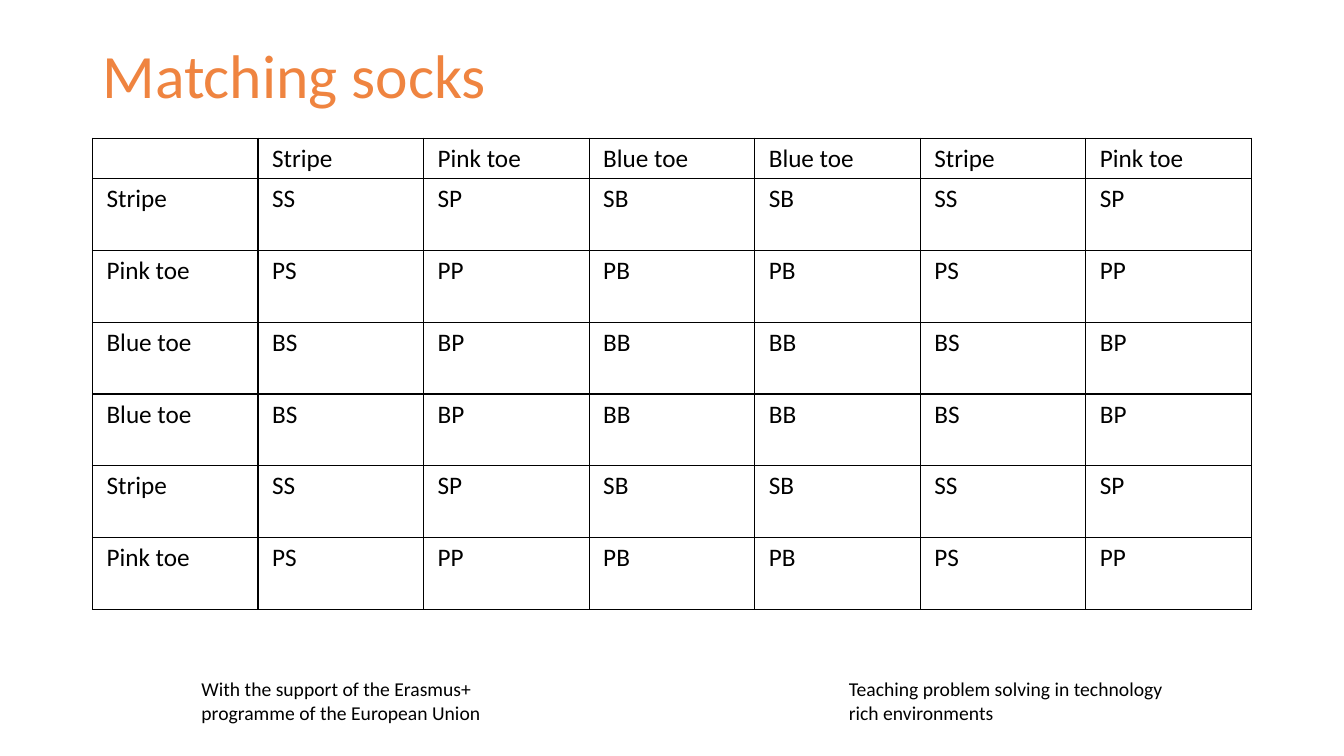
from lxml.etree import SubElement
from pptx import Presentation
from pptx.dml.color import RGBColor
from pptx.enum.shapes import MSO_SHAPE
from pptx.enum.text import MSO_ANCHOR, MSO_AUTO_SIZE, PP_ALIGN
from pptx.oxml.ns import qn
from pptx.util import Inches, Pt

COLOURS = {"title": "EF8440", "ink": "000000", "paper": "FFFFFF"}
FONT = "Calibri"
WIDTH, HEIGHT = Inches(13.33), Inches(7.5)
SOCKS = ["Stripe", "Pink toe", "Blue toe", "Blue toe", "Stripe", "Pink toe"]


def across(percent):
    return round(WIDTH * percent / 100)


def down(percent):
    return round(HEIGHT * percent / 100)


def area(left, top, width, height):
    return across(left), down(top), across(width), down(height)


def write(frame, text, size, colour):
    frame.word_wrap = True
    paragraph = frame.paragraphs[0]
    paragraph.text = text
    paragraph.alignment = PP_ALIGN.LEFT
    paragraph.font.name = FONT
    paragraph.font.size = Pt(size)
    paragraph.font.color.rgb = RGBColor.from_string(COLOURS[colour])
    return paragraph


def add_text(page, place, text, size, colour):
    box = page.shapes.add_textbox(*area(*place))
    return box, write(box.text_frame, text, size, colour)


def add_panel(page, place, text, size):
    panel = page.shapes.add_shape(MSO_SHAPE.RECTANGLE, *area(*place))
    panel.shadow.inherit = False
    panel.fill.solid()
    panel.fill.fore_color.rgb = RGBColor.from_string(COLOURS["paper"])
    panel.line.fill.background()
    panel.text_frame.vertical_anchor = MSO_ANCHOR.TOP
    write(panel.text_frame, text, size, "ink").space_after = Pt(8)


def add_borders(cell):
    properties = cell._tc.get_or_add_tcPr()
    for side in ("lnL", "lnR", "lnT", "lnB"):
        line = SubElement(properties, qn(f"a:{side}"), w=str(Pt(1)))
        fill = SubElement(line, qn("a:solidFill"))
        SubElement(fill, qn("a:srgbClr"), val=COLOURS["ink"])


def fill_cell(cell, text):
    cell.margin_left = cell.margin_right = Inches(0.14)
    cell.margin_top = cell.margin_bottom = Inches(0.05)
    add_borders(cell)
    cell.fill.background()
    write(cell.text_frame, text, 18, "ink")


def add_pairs_table(page, place, socks, row_heights):
    rows = [["", *socks]]
    rows += [[first] + [first[0] + second[0] for second in socks] for first in socks]
    table = page.shapes.add_table(len(rows), len(rows[0]), *area(*place)).table
    table.first_row = table.horz_banding = False
    for row, height, texts in zip(table.rows, row_heights, rows):
        row.height = down(height)
        for cell, text in zip(row.cells, texts):
            fill_cell(cell, text)


def main():
    deck = Presentation()
    deck.slide_width, deck.slide_height = WIDTH, HEIGHT
    page = deck.slides.add_slide(deck.slide_layouts[6])

    add_panel(page, (14.25, 88.93, 25.81, 7.87),
              "With the support of the Erasmus+ programme of the European Union", 14)
    project, _ = add_text(page, (62.42, 88.93, 26.93, 7.6),
                          "Teaching problem solving in technology rich environments", 14, "ink")
    project.text_frame.auto_size = MSO_AUTO_SIZE.SHAPE_TO_FIT_TEXT

    _, heading = add_text(page, (6.88, 5.33, 86.25, 19.33), "Matching socks", 44, "title")
    heading.line_spacing = 0.9

    row_heights = [5.4] + [9.49] * len(SOCKS)
    add_pairs_table(page, (6.88, 18.27, 86.25, sum(row_heights)), SOCKS, row_heights)

    deck.save("out.pptx")


if __name__ == "__main__":
    main()
